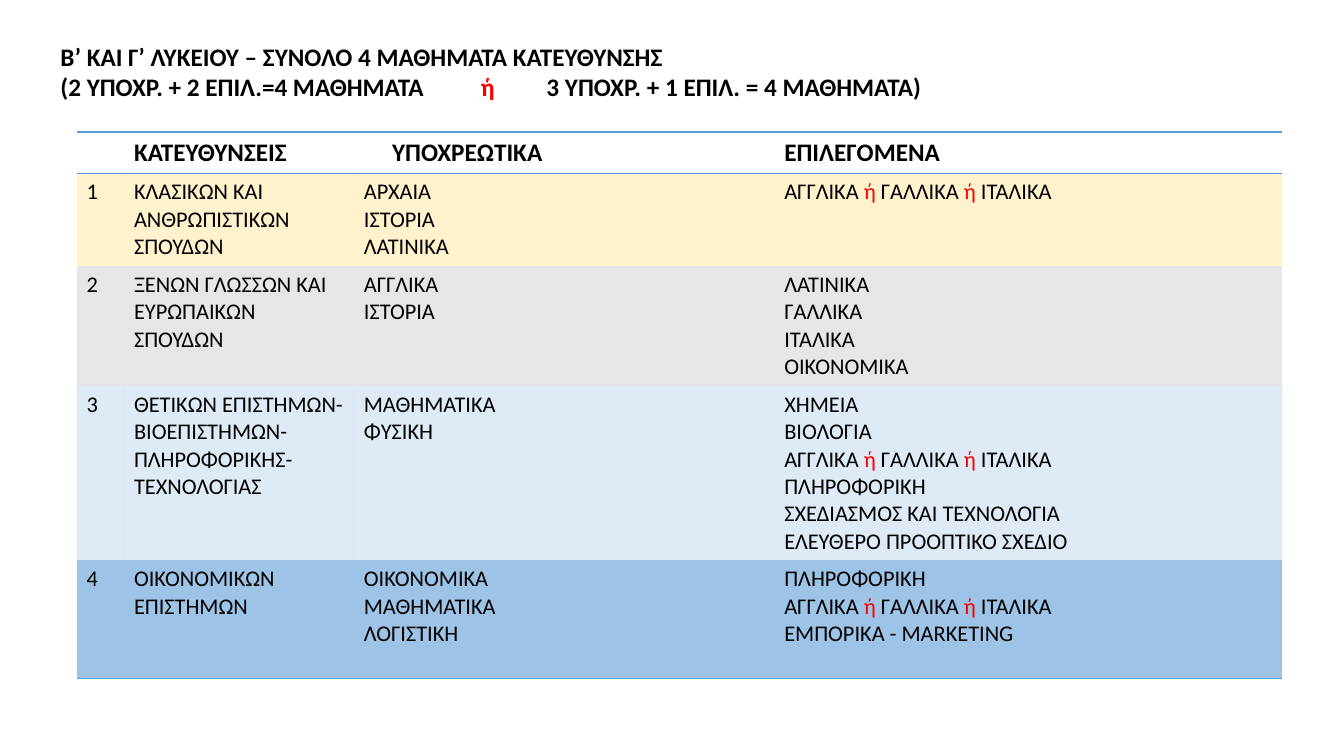
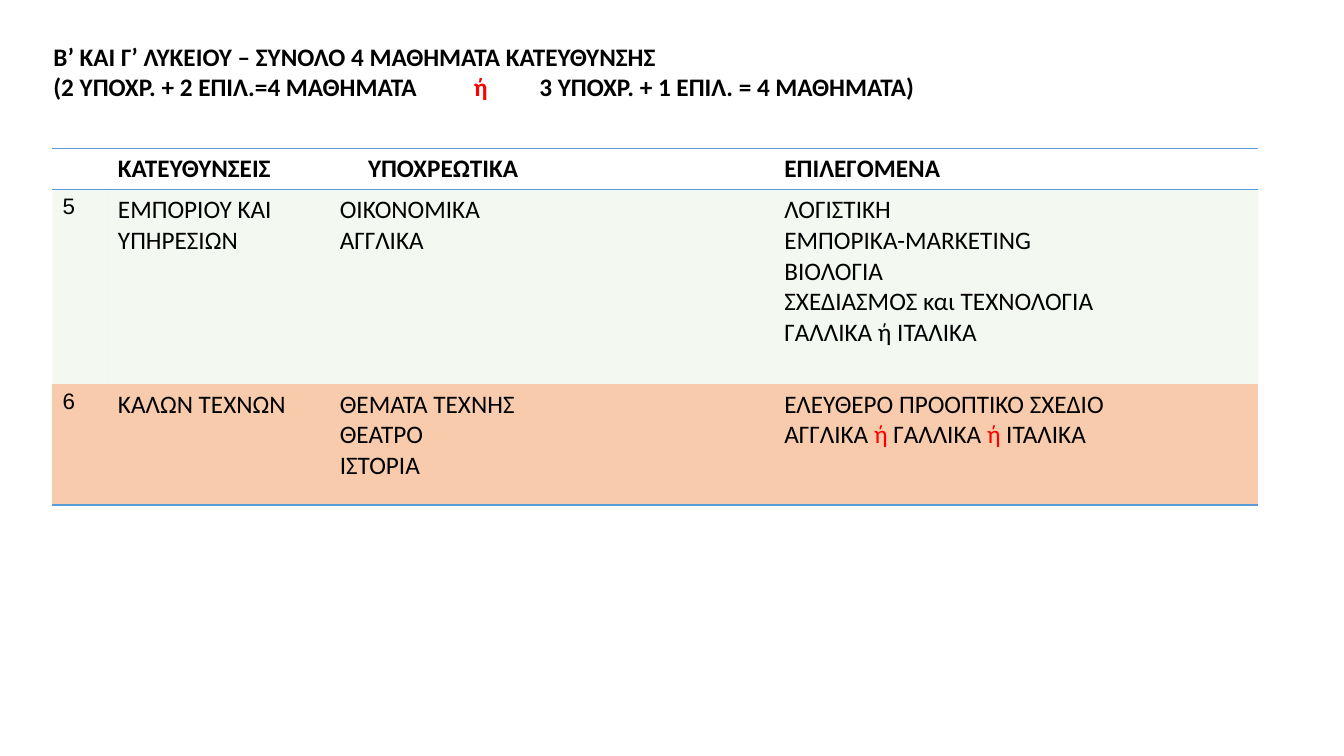
from dataclasses import dataclass
from lxml.etree import SubElement
from pptx import Presentation
from pptx.dml.color import RGBColor
from pptx.enum.text import MSO_ANCHOR, MSO_AUTO_SIZE, PP_ALIGN
from pptx.oxml.ns import qn
from pptx.util import Inches, Pt


@dataclass(frozen=True)
class Theme:
    font: str = "Calibri"
    plain: str = "Arial"
    head: int = 18
    body: int = 16
    ink: str = "000000"
    red: str = "FF0000"
    rule: str = "5B9BD5"
    gold: str = "FFC000"
    grey: str = "E7E6E6"
    blue: str = "9DC3E6"
    green: str = "C5E0B4"
    peach: str = "F8CBAD"
    bare: str = "{2D5ABB26-0587-4C30-8999-92F81FD0307C}"


T = Theme()
TITLE = [
    "Β’ ΚΑΙ Γ’ ΛΥΚΕΙΟΥ – ΣΥΝΟΛΟ 4 ΜΑΘΗΜΑΤΑ ΚΑΤΕΥΘΥΝΣΗΣ",
    "(2 ΥΠΟΧΡ. + 2 ΕΠΙΛ.=4 ΜΑΘΗΜΑΤΑ\t|ή|\t3 ΥΠΟΧΡ. + 1 ΕΠΙΛ. = 4 ΜΑΘΗΜΑΤΑ)",
]
LANGS = "ΑΓΓΛΙΚΑ |ή| ΓΑΛΛΙΚΑ |ή| ΙΤΑΛΙΚΑ"
DECK = [
    {
        "left": 0.44, "at": (0.76, 1.31), "size": T.body, "digit": T.font,
        "cols": [0.47, 2.28, 4.17, 5.04],
        "rows": [0.41, 0.92, 1.19, 1.73, 1.17],
        "fills": [(T.gold, 20), (T.grey, 100), (T.rule, 20), (T.blue, 100)],
        "cells": [
            ["", "ΚΑΤΕΥΘΥΝΣΕΙΣ", "ΥΠΟΧΡΕΩΤΙΚΑ", "ΕΠΙΛΕΓΟΜΕΝΑ"],
            ["1", "ΚΛΑΣΙΚΩΝ ΚΑΙ ΑΝΘΡΩΠΙΣΤΙΚΩΝ ΣΠΟΥΔΩΝ",
             "ΑΡΧΑΙΑ\nΙΣΤΟΡΙΑ\nΛΑΤΙΝΙΚΑ", LANGS],
            ["2", "ΞΕΝΩΝ ΓΛΩΣΣΩΝ ΚΑΙ ΕΥΡΩΠΑΙΚΩΝ ΣΠΟΥΔΩΝ",
             "ΑΓΓΛΙΚΑ\nΙΣΤΟΡΙΑ", "ΛΑΤΙΝΙΚΑ\nΓΑΛΛΙΚΑ\nΙΤΑΛΙΚΑ\nΟΙΚΟΝΟΜΙΚΑ"],
            ["3", "ΘΕΤΙΚΩΝ ΕΠΙΣΤΗΜΩΝ-ΒΙΟΕΠΙΣΤΗΜΩΝ-ΠΛΗΡΟΦΟΡΙΚΗΣ-ΤΕΧΝΟΛΟΓΙΑΣ",
             "ΜΑΘΗΜΑΤΙΚΑ\nΦΥΣΙΚΗ",
             f"ΧΗΜΕΙΑ\nΒΙΟΛΟΓΙΑ\n{LANGS}\nΠΛΗΡΟΦΟΡΙΚΗ\n"
             "ΣΧΕΔΙΑΣΜΟΣ ΚΑΙ ΤΕΧΝΟΛΟΓΙΑ\nΕΛΕΥΘΕΡΟ ΠΡΟΟΠΤΙΚΟ ΣΧΕΔΙΟ"],
            ["4", "ΟΙΚΟΝΟΜΙΚΩΝ ΕΠΙΣΤΗΜΩΝ", "ΟΙΚΟΝΟΜΙΚΑ\nΜΑΘΗΜΑΤΙΚΑ\nΛΟΓΙΣΤΙΚΗ",
             f"ΠΛΗΡΟΦΟΡΙΚΗ\n{LANGS}\nΕΜΠΟΡΙΚΑ - MARKETING"],
        ],
    },
    {
        "left": 0.37, "at": (0.52, 1.47), "size": T.head, "digit": T.plain,
        "cols": [0.55, 2.2, 4.41, 4.8],
        "rows": [0.41, 1.93, 1.2],
        "fills": [(T.green, 20), (T.peach, 100)],
        "cells": [
            ["", "ΚΑΤΕΥΘΥΝΣΕΙΣ", "ΥΠΟΧΡΕΩΤΙΚΆ", "ΕΠΙΛΕΓΟΜΕΝΑ"],
            ["5", "ΕΜΠΟΡΙΟΥ ΚΑΙ ΥΠΗΡΕΣΙΩΝ", "ΟΙΚΟΝΟΜΙΚΑ\nΑΓΓΛΙΚΑ",
             "ΛΟΓΙΣΤΙΚΗ\nΕΜΠΟΡΙΚΑ-MARKETING\nΒΙΟΛΟΓΙΑ\n"
             "ΣΧΕΔΙΑΣΜΟΣ και ΤΕΧΝΟΛΟΓΙΑ\nΓΑΛΛΙΚΑ ή ΙΤΑΛΙΚΑ"],
            ["6", "ΚΑΛΩΝ ΤΕΧΝΩΝ", "ΘΕΜΑΤΑ ΤΕΧΝΗΣ\nΘΕΑΤΡΟ\nΙΣΤΟΡΙΑ",
             f"ΕΛΕΥΘΕΡΟ ΠΡΟΟΠΤΙΚΟ ΣΧΕΔΙΟ\n{LANGS}"],
        ],
    },
]


def write(frame, lines, size, bold=False, name=T.font):
    for i, line in enumerate(lines):
        para = frame.paragraphs[0] if i == 0 else frame.add_paragraph()
        para.alignment = PP_ALIGN.LEFT
        para.font.size = Pt(size)
        para.font.bold = bold
        para.font.name = name
        para.font.color.rgb = RGBColor.from_string(T.ink)
        for n, part in enumerate(line.split("|")):
            run = para.add_run()
            run.text = part
            if n % 2:
                run.font.color.rgb = RGBColor.from_string(T.red)


def border(cell, side):
    line = SubElement(cell._tc.get_or_add_tcPr(), qn(f"a:{side}"), w=str(Pt(1)))
    fill = SubElement(line, qn("a:solidFill"))
    SubElement(fill, qn("a:srgbClr"), val=T.rule)


deck = Presentation()
deck.slide_width, deck.slide_height = Inches(13.33), Inches(7.5)

for page in DECK:
    slide = deck.slides.add_slide(deck.slide_layouts[5])
    title = slide.shapes.title
    title.left, title.top = Inches(page["left"]), Inches(0.36)
    title.width, title.height = Inches(11.5), Inches(0.71)
    frame = title.text_frame
    frame.auto_size = MSO_AUTO_SIZE.NONE
    frame.vertical_anchor = MSO_ANCHOR.TOP
    write(frame, TITLE, T.head, True)
    first, second = frame.paragraphs
    first._p.get_or_add_pPr().set("marL", str(Inches(0.06)))
    props = second._p.get_or_add_pPr()
    tabs = SubElement(props, qn("a:tabLst"))
    props.find(qn("a:defRPr")).addprevious(tabs)
    for stop in (4.17, 4.82):
        SubElement(tabs, qn("a:tab"), pos=str(Inches(stop)), algn="l")

    cols, rows = page["cols"], page["rows"]
    left, top = page["at"]
    table = slide.shapes.add_table(
        len(rows), len(cols), Inches(left), Inches(top),
        Inches(sum(cols)), Inches(sum(rows))).table
    table.first_row = table.horz_banding = False
    table._tbl.tblPr.find(qn("a:tableStyleId")).text = T.bare
    for col, width in zip(table.columns, cols):
        col.width = Inches(width)
    for row, height in zip(table.rows, rows):
        row.height = Inches(height)

    for r, texts in enumerate(page["cells"]):
        for c, text in enumerate(texts):
            cell = table.cell(r, c)
            if r == 0:
                border(cell, "lnT")
            if r in (0, len(rows) - 1):
                border(cell, "lnB")
            if r == 0:
                cell.fill.background()
                if c == 2:
                    cell.margin_left = Inches(0.38)
                write(cell.text_frame, [text], T.head, True)
                continue
            tint, alpha = page["fills"][r - 1]
            cell.fill.solid()
            cell.fill.fore_color.rgb = RGBColor.from_string(tint)
            if alpha < 100:
                color = cell._tc.tcPr.find(qn("a:solidFill"))[0]
                SubElement(color, qn("a:alpha"), val=str(alpha * 1000))
            size, name = (T.body, page["digit"]) if c == 0 else (page["size"], T.font)
            write(cell.text_frame, text.split("\n"), size, name=name)

deck.save("out.pptx")
